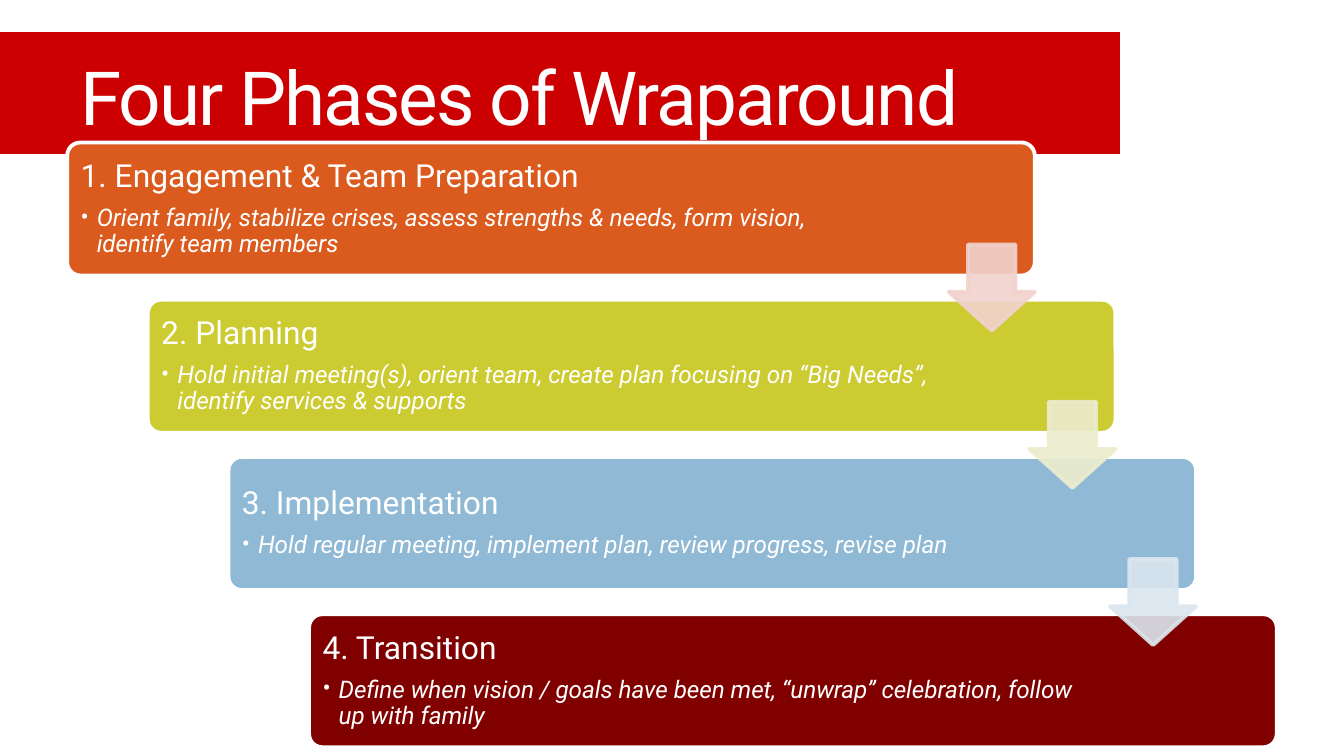
"""Build the slide showing the four phases of Wraparound as a descending staircase."""
import pptx
import pptx.dml.color
import pptx.enum.shapes
import pptx.enum.text
import pptx.oxml.ns
import pptx.util
from lxml import etree

TITLE = "Four Phases of Wraparound"
PHASES = [
    {"heading": "1. Engagement & Team Preparation",
     "detail": "Orient family, stabilize crises, assess strengths & needs, form vision, "
               "identify team members",
     "fill": "DB5A1E", "arrow": "F1D2CD", "text_width": 6.05},
    {"heading": "2. Planning",
     "detail": "Hold initial meeting(s), orient team, create plan focusing on “Big Needs”, "
               "identify services & supports",
     "fill": "CCCB31", "arrow": "ECECCE", "text_width": 5.9},
    {"heading": "3. Implementation",
     "detail": "Hold regular meeting, implement plan, review progress, revise plan",
     "fill": "8FB9D4", "arrow": "DBE6EF", "text_width": 5.9},
    {"heading": "4. Transition",
     "detail": "Define when vision / goals have been met, “unwrap” celebration, follow up with family",
     "fill": "800000", "arrow": None, "text_width": 5.9},
]
THEME = {"font": "Roboto", "text": "FFFFFF", "line": "FFFFFF", "banner": "CC0000",
         "title": 40, "heading": 17, "detail": 13, "thin": 0.75, "thick": 2.08}

SLIDE_WIDTH = 10
SLIDE_HEIGHT = SLIDE_WIDTH * 9 / 16
LEFT, TOP = 0.5, 1.06
STEP_X, STEP_Y = 0.6, 1.17
BOX_WIDTH, BOX_HEIGHT = 7.2, 0.99
PADDING, INSET = 0.03, 0.07
ARROW_SIZE, ARROW_X, ARROW_Y = 0.64, 6.56, 0.76
BULLET_INDENT = 0.12

SHAPES = pptx.enum.shapes.MSO_SHAPE


def color(value):
    return pptx.dml.color.RGBColor.from_string(value)


def add_block(slide, kind, box, fill, line, line_width, adjustments=(), opacity=100):
    shape = slide.shapes.add_shape(kind, *map(pptx.util.Inches, box))
    shape.shadow.inherit = False
    for index, value in enumerate(adjustments):
        shape.adjustments[index] = value
    shape.fill.solid()
    shape.fill.fore_color.rgb = color(fill)
    shape.line.color.rgb = color(line)
    shape.line.width = pptx.util.Pt(line_width)
    if opacity < 100:
        for value in shape._element.spPr.iter(pptx.oxml.ns.qn("a:srgbClr")):
            etree.SubElement(value, pptx.oxml.ns.qn("a:alpha"), val=str(opacity * 1000))
    return shape


def add_text_frame(slide, box, inset_x, inset_y):
    frame = slide.shapes.add_textbox(*map(pptx.util.Inches, box)).text_frame
    frame.word_wrap = True
    frame.vertical_anchor = pptx.enum.text.MSO_ANCHOR.MIDDLE
    frame.margin_left = frame.margin_right = pptx.util.Inches(inset_x)
    frame.margin_top = frame.margin_bottom = pptx.util.Inches(inset_y)
    return frame


def write(paragraph, text, size, italic=False, line_spacing=1.0, space_after=0,
          tracking=0, bullet=False):
    paragraph.line_spacing = line_spacing
    paragraph.space_after = pptx.util.Pt(space_after)
    run = paragraph.add_run()
    run.text = text
    run.font.name = THEME["font"]
    run.font.size = pptx.util.Pt(size)
    run.font.italic = italic
    run.font.color.rgb = color(THEME["text"])
    if tracking:
        run._r.get_or_add_rPr().set("spc", str(tracking * 100))
    if bullet:
        paragraph.level = 1
        properties = paragraph._p.get_or_add_pPr()
        indent = pptx.util.Inches(BULLET_INDENT)
        properties.set("marL", str(indent))
        properties.set("indent", str(-indent))
        etree.SubElement(properties, pptx.oxml.ns.qn("a:buFont"), typeface=THEME["font"])
        etree.SubElement(properties, pptx.oxml.ns.qn("a:buChar"), char="•")


def add_phase(slide, phase, left, top):
    add_block(slide, SHAPES.ROUNDED_RECTANGLE, (left, top, BOX_WIDTH, BOX_HEIGHT),
              phase["fill"], THEME["line"], THEME["thick"], adjustments=(0.1,))
    frame = add_text_frame(slide, (left + PADDING, top + PADDING, phase["text_width"],
                                   BOX_HEIGHT - 2 * PADDING), INSET, INSET)
    write(frame.paragraphs[0], phase["heading"], THEME["heading"],
          line_spacing=0.9, space_after=0.35 * THEME["heading"])
    write(frame.add_paragraph(), phase["detail"], THEME["detail"], italic=True,
          line_spacing=0.9, space_after=0.15 * THEME["detail"], bullet=True)


def main():
    presentation = pptx.Presentation()
    presentation.slide_width = pptx.util.Inches(SLIDE_WIDTH)
    presentation.slide_height = pptx.util.Inches(SLIDE_HEIGHT)
    slide = presentation.slides.add_slide(presentation.slide_layouts[6])

    add_block(slide, SHAPES.RECTANGLE, (-0.08, 0.23, 8.42, 0.92),
              THEME["banner"], THEME["line"], THEME["thin"])
    title = add_text_frame(slide, (LEFT, 0.31, SLIDE_WIDTH - 2 * LEFT, 0.81), 0.1, 0.05)
    write(title.paragraphs[0], TITLE, THEME["title"], tracking=-1)

    corners = [(LEFT + row * STEP_X, TOP + row * STEP_Y) for row in range(len(PHASES))]
    for phase, (left, top) in zip(PHASES, corners):
        add_phase(slide, phase, left, top)
    for phase, (left, top) in zip(PHASES[:-1], corners):
        add_block(slide, SHAPES.DOWN_ARROW,
                  (left + ARROW_X, top + ARROW_Y, ARROW_SIZE, ARROW_SIZE),
                  phase["arrow"], phase["arrow"], THEME["thick"],
                  adjustments=(0.55, 0.45), opacity=90)

    presentation.save("out.pptx")


if __name__ == "__main__":
    main()
